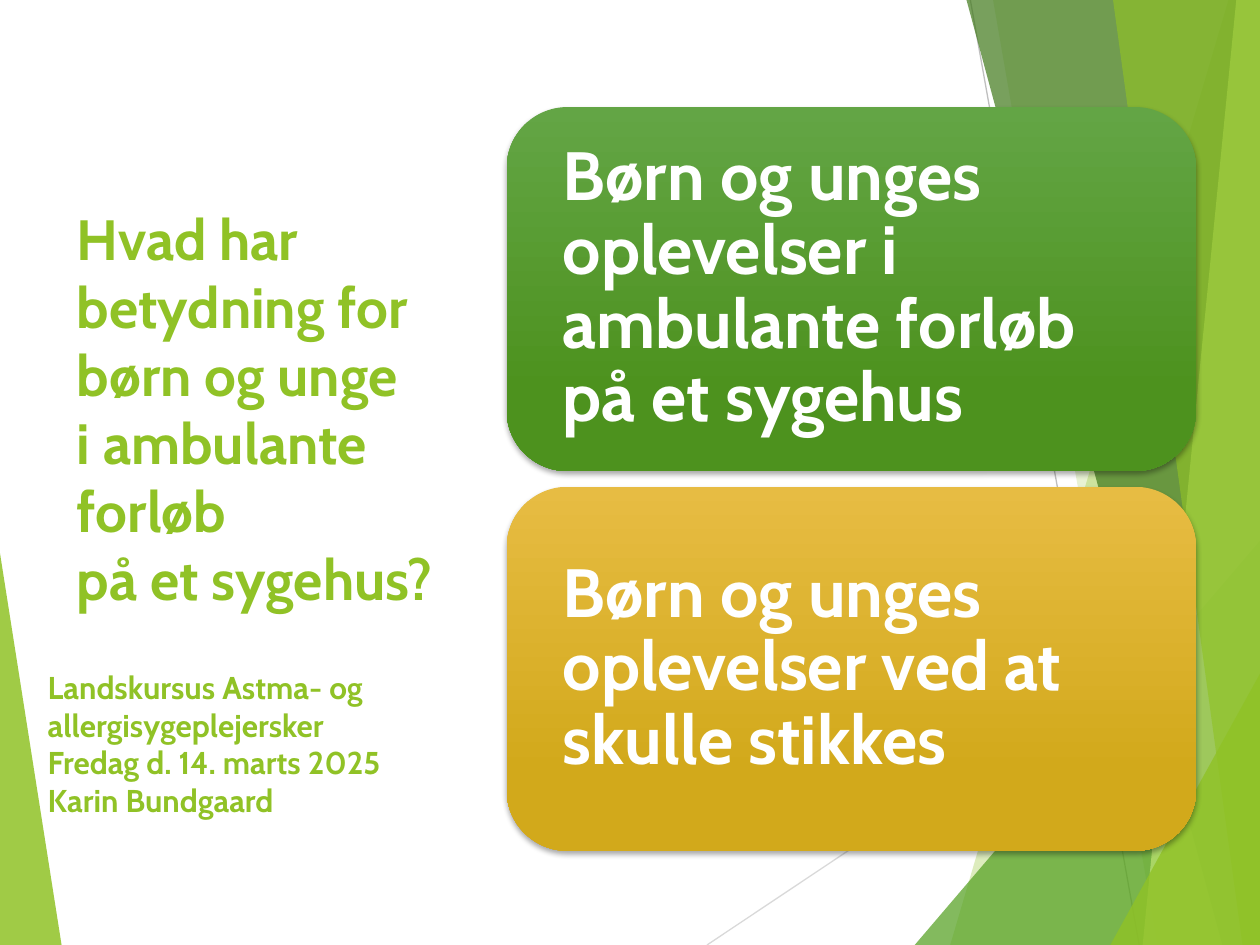
from dataclasses import dataclass

from lxml import etree
from pptx import Presentation
from pptx.dml.color import RGBColor
from pptx.enum import shapes, text
from pptx.oxml import ns
from pptx.util import Pt


@dataclass(frozen=True)
class Theme:
    """Colours, font and type sizes of the slide."""
    font: str = "Cabin"
    lime: str = "90C226"
    green: str = "54A021"
    forest: str = "3F7819"
    pale: str = "C0E474"
    white: str = "FFFFFF"
    light_line: str = "D9D9D9"
    dark_line: str = "BFBFBF"
    green_card: tuple = ("63A545", "4D921E")
    gold_card: tuple = ("E7BC43", "D2A91B")
    title_size: float = 32.4
    card_size: float = 39
    event_size: float = 18


THEME = Theme()


def sub(parent, tag, **attrs):
    """Append a DrawingML child element and return it."""
    child = etree.SubElement(parent, ns.qn(tag))
    for name, value in attrs.items():
        child.set(name, str(value))
    return child


def style_text(tf, size, color):
    """Format every run of a text frame as bold left-aligned text."""
    for p in tf.paragraphs:
        p.alignment = text.PP_ALIGN.LEFT
        for r in p.runs:
            r.font.name = THEME.font
            r.font.size = Pt(size)
            r.font.bold = True
            r.font.color.rgb = RGBColor.from_string(color)


def add_facet(s, points, color, opacity):
    """Draw one translucent polygon."""
    corners = [(Pt(x), Pt(y)) for x, y in points]
    builder = s.shapes.build_freeform(*corners[0], scale=1.0)
    builder.add_line_segments(corners[1:], close=True)
    sp = builder.convert_to_shape()
    sp.shadow.inherit = False
    sp.line.fill.background()
    sp.fill.solid()
    sp.fill.fore_color.rgb = RGBColor.from_string(color)
    clr = sp.fill._xPr.find(".//" + ns.qn("a:srgbClr"))
    sub(clr, "a:alpha", val=opacity * 1000)


def add_hairline(s, start, end, color):
    """Draw one thin straight line."""
    line = s.shapes.add_connector(
        shapes.MSO_CONNECTOR.STRAIGHT, *map(Pt, start + end))
    line.line.color.rgb = RGBColor.from_string(color)
    line.line.width = Pt(0.75)
    sub(line._element.spPr, "a:effectLst")


def add_backdrop(s, x, y, w, h):
    """Draw the faceted ribbons along both sides of the box."""
    right, bottom = x + w, y + h

    def strip(top_x, bottom_x):
        """Return a ribbon reaching the right edge at full height."""
        return [(x + top_x, y), (x + bottom_x, bottom),
                (right, bottom), (right, y)]

    def corner(bottom_x, edge_y):
        """Return a triangle in the lower right corner."""
        return [(x + bottom_x, bottom), (right, y + edge_y), (right, bottom)]

    add_facet(s, [(x, y + 316), (x + 35.2, bottom), (x, bottom)],
              THEME.lime, 85)
    add_hairline(s, (x + 404, bottom), (right, y + 329), THEME.light_line)
    add_hairline(s, (x + 554.5, y), (x + 651, bottom), THEME.dark_line)
    facets = (
        (strip(702, 543), THEME.lime, 30),
        (strip(567.5, 661.5), THEME.lime, 20),
        (corner(522.7, 309), THEME.green, 72),
        (strip(552.3, 698.5), THEME.forest, 70),
        (strip(706.5, 653), THEME.pale, 70),
        (strip(636, 710), THEME.lime, 65),
        (corner(634.5, 385), THEME.lime, 80),
    )
    for points, color, opacity in facets:
        add_facet(s, points, color, opacity)


def add_question(s, x, y, w, h):
    """Place the question in the title placeholder."""
    title = s.shapes.title
    title.left, title.top, title.width, title.height = map(Pt, (x, y, w, h))
    tf = title.text_frame
    tf.text = ("Hvad har betydning for børn og unge\v"
               "i ambulante forløb\vpå et sygehus?")
    tf.auto_size = text.MSO_AUTO_SIZE.NONE
    tf.word_wrap = True
    tf.vertical_anchor = text.MSO_ANCHOR.BOTTOM
    tf.margin_bottom = Pt(42.5)
    style_text(tf, THEME.title_size, THEME.lime)


def add_card(s, x, y, w, h, wording, colors):
    """Place one rounded gradient card with its text."""
    sp = s.shapes.add_shape(
        shapes.MSO_SHAPE.ROUNDED_RECTANGLE, *map(Pt, (x, y, w, h)))
    sp.line.fill.background()
    sp.fill.gradient()
    sp.fill.gradient_angle = 270
    for stop, color, position in zip(sp.fill.gradient_stops, colors, (0, 0.78)):
        stop.color.rgb = RGBColor.from_string(color)
        stop.position = position
    sp.shadow.inherit = False
    effects = sp._element.spPr.find(ns.qn("a:effectLst"))
    shadow = sub(effects, "a:outerShdw", blurRad=Pt(3), dist=Pt(2),
                 dir=5400000, rotWithShape=0)
    sub(sub(shadow, "a:srgbClr", val="000000"), "a:alpha", val=35000)
    tf = sp.text_frame
    tf.text = wording
    tf.word_wrap = True
    tf.vertical_anchor = text.MSO_ANCHOR.MIDDLE
    tf.margin_left = tf.margin_right = Pt(22)
    tf.margin_top = tf.margin_bottom = Pt(22)
    tf.paragraphs[0].line_spacing = 0.9
    style_text(tf, THEME.card_size, THEME.white)


def add_cards(s, x, y, w, h, gap=9):
    """Stack the topic cards evenly in the box."""
    topics = (
        ("Børn og unges oplevelser i ambulante forløb på et sygehus",
         THEME.green_card),
        ("Børn og unges oplevelser ved at skulle stikkes", THEME.gold_card),
    )
    height = (h - gap * (len(topics) - 1)) / len(topics)
    for i, (wording, colors) in enumerate(topics):
        add_card(s, x, y + i * (height + gap), w, height, wording, colors)


def add_event(s, x, y, w, h):
    """Place the course, date and speaker."""
    tf = s.shapes.add_textbox(*map(Pt, (x, y, w, h))).text_frame
    tf.text = ("Landskursus Astma- og\nallergisygeplejersker\n"
               "Fredag d. 14. marts 2025\nKarin Bundgaard")
    tf.word_wrap = False
    tf.auto_size = text.MSO_AUTO_SIZE.SHAPE_TO_FIT_TEXT
    style_text(tf, THEME.event_size, THEME.lime)


def main():
    """Build and save the slide."""
    prs = Presentation()
    prs.slide_width, prs.slide_height = Pt(720), Pt(540)
    s = prs.slides.add_slide(prs.slide_layouts[5])
    add_backdrop(s, 0, 0, 720, 540)
    add_question(s, 36.7, 111.6, 220.3, 280.8)
    add_cards(s, 289.5, 61.2, 394, 425)
    add_event(s, 20.2, 378, 230.4, 94.3)
    prs.save("out.pptx")


if __name__ == "__main__":
    main()
